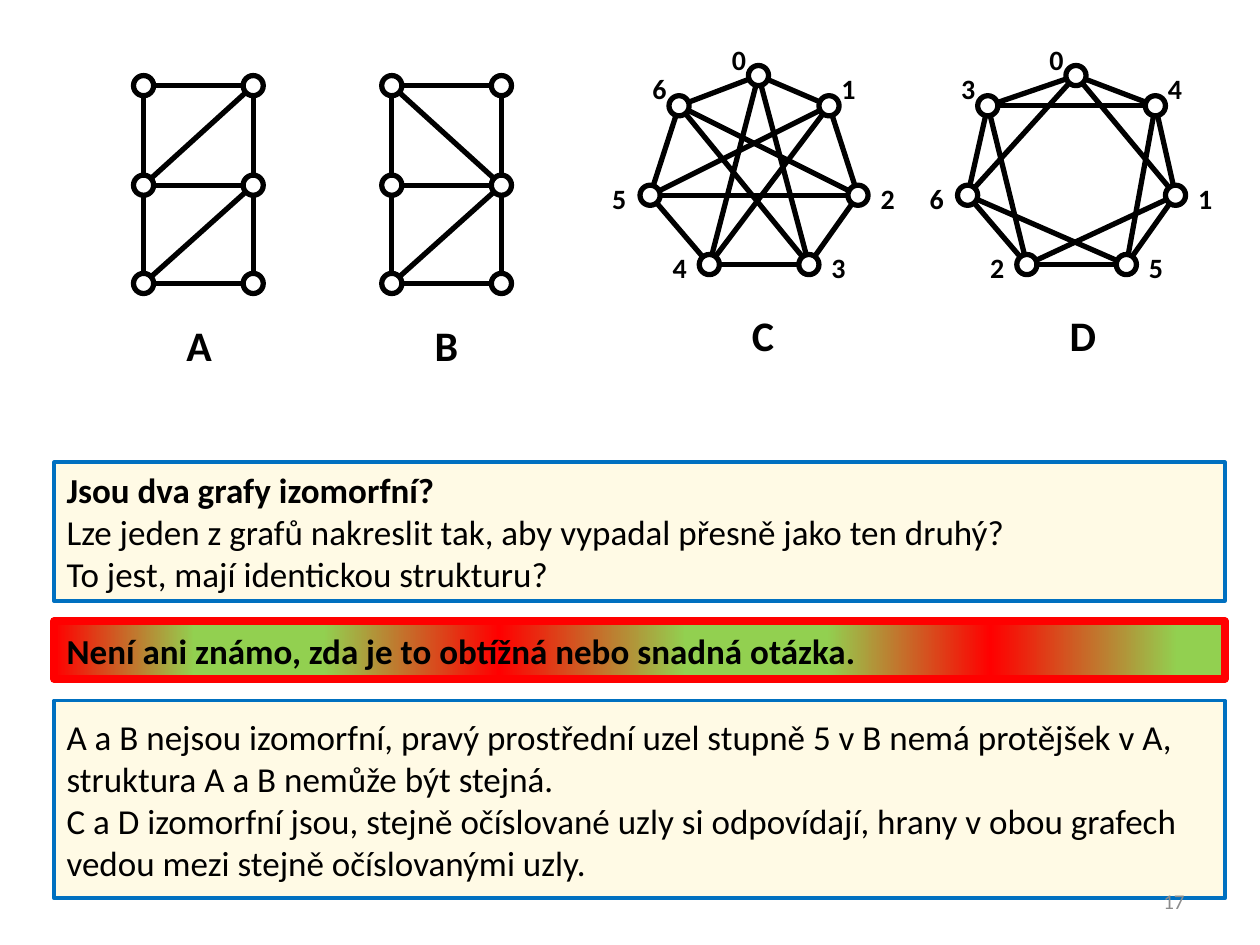
import pptx
import pptx.util
import pptx.dml.color
import pptx.enum.shapes
import pptx.enum.text
import pptx.oxml
import pptx.oxml.ns
from pptx.util import Inches

BLACK, WHITE, RED, GREEN = "000000", "FFFFFF", "FF0000", "92D050"
CREAM, BLUE, GREY = "FFFAE5", "0070C0", "8C8C8C"
FONT = "Calibri"
NODE_SIZE = 0.16

# Ladder graphs: nodes are (column, row), rungs and rails are shared
LADDER_COLUMNS = (0, 0.87)
LADDER_ROWS = (0.68, 1.47, 2.25)
LADDER_EDGES = [((0, row), (1, row)) for row in range(3)] + [
    ((column, 0), (column, 2)) for column in range(2)]
LADDERS = [
    # name, left, diagonals
    ("A", 1.14, [((0, 1), (1, 0)), ((0, 2), (1, 1))]),
    ("B", 3.11, [((0, 0), (1, 1)), ((0, 2), (1, 1))]),
]

# Seven-node graphs: both join i to i + 1 and to i + 3, only the order differs
RING_EDGES = [(i, (i + step) % 7) for step in (1, 3) for i in range(7)]
RINGS = [
    # name, name left, labels clockwise from the top, node centres
    ("C", 5.87, [0, 1, 2, 3, 4, 5, 6],
     [(6.02, 0.6), (6.58, 0.84), (6.81, 1.55), (6.42, 2.1),
      (5.63, 2.1), (5.16, 1.55), (5.39, 0.84)]),
    ("D", 8.39, [0, 4, 1, 5, 2, 6, 3],
     [(8.54, 0.6), (9.17, 0.84), (9.33, 1.55), (8.94, 2.1),
      (8.15, 2.1), (7.68, 1.55), (7.84, 0.84)]),
]
LABEL_OFFSETS = [(-0.31, -0.31), (0, -0.32), (0.08, -0.16), (0.08, -0.16),
                 (-0.39, -0.16), (-0.4, -0.16), (-0.31, -0.32)]

# Text panels: top, height, fill, line colour, line width, (text, bold)
GRADIENT = [(0, RED), (12, GREEN), (23, GREEN), (38, RED),
            (54, GREEN), (66, GREEN), (80, RED), (96, GREEN)]
PANELS = [
    (3.67, 1.1, CREAM, BLUE, 2.25, [
        ("Jsou dva grafy izomorfní?", True),
        ("Lze jeden z grafů nakreslit tak, aby vypadal přesně jako ten druhý?", False),
        ("To jest, mají identickou strukturu?", False)]),
    (4.93, 0.46, GRADIENT, RED, 4.5, [
        ("Není ani známo, zda je to obtížná nebo snadná otázka.", True)]),
    (5.56, 1.57, CREAM, BLUE, 2.25, [
        ("A a B nejsou izomorfní, pravý prostřední uzel stupně 5 v B nemá "
         "protějšek v A, struktura A a B nemůže být stejná.", False),
        ("C a D izomorfní jsou, stejně očíslované uzly si odpovídají, hrany v "
         "obou grafech vedou mezi stejně očíslovanými uzly.", False)]),
]

presentation = pptx.Presentation()
presentation.slide_width, presentation.slide_height = Inches(10), Inches(7.5)
slide = presentation.slides.add_slide(presentation.slide_layouts[6])


def rgb(value):
    return pptx.dml.color.RGBColor.from_string(value)


def set_line(line, color, width):
    line.color.rgb = rgb(color)
    line.width = pptx.util.Pt(width)


def set_gradient(shape, stops):
    shape.fill.gradient()
    shape.fill.gradient_angle = 0
    stop_list = shape.element.spPr.find(".//" + pptx.oxml.ns.qn("a:gsLst"))
    for stop in list(stop_list):
        stop_list.remove(stop)
    for percent, color in stops:
        stop_list.append(pptx.oxml.parse_xml(
            f'<a:gs {pptx.oxml.ns.nsdecls("a")} pos="{percent * 1000}">'
            f'<a:srgbClr val="{color}"/></a:gs>'))


def write(frame, lines, size, color=BLACK, align=pptx.enum.text.PP_ALIGN.LEFT):
    for index, (text, bold) in enumerate(lines):
        paragraph = frame.add_paragraph() if index else frame.paragraphs[0]
        paragraph.alignment = align
        run = paragraph.add_run()
        run.text = text
        run.font.name, run.font.size = FONT, pptx.util.Pt(size)
        run.font.bold = bold
        run.font.color.rgb = rgb(color)


def add_label(text, left, top, width, height, size, wrap):
    frame = slide.shapes.add_textbox(
        Inches(left), Inches(top), Inches(width), Inches(height)).text_frame
    frame.word_wrap = wrap
    frame.auto_size = pptx.enum.text.MSO_AUTO_SIZE.SHAPE_TO_FIT_TEXT
    write(frame, [(text, True)], size)


def add_shape(kind, left, top, width, height):
    shape = slide.shapes.add_shape(
        kind, Inches(left), Inches(top), Inches(width), Inches(height))
    shape.shadow.inherit = False
    return shape


def add_graph(nodes, edges):
    """Draw the edges first, then the nodes over their ends."""
    for start, end in edges:
        edge = slide.shapes.add_connector(
            pptx.enum.shapes.MSO_CONNECTOR.STRAIGHT,
            *(Inches(value) for value in nodes[start] + nodes[end]))
        set_line(edge.line, BLACK, 3)
        edge.element.spPr.append(pptx.oxml.parse_xml(
            f'<a:effectLst {pptx.oxml.ns.nsdecls("a")}/>'))
    for x, y in nodes.values():
        node = add_shape(pptx.enum.shapes.MSO_SHAPE.OVAL, x - NODE_SIZE / 2,
                         y - NODE_SIZE / 2, NODE_SIZE, NODE_SIZE)
        node.fill.solid()
        node.fill.fore_color.rgb = rgb(WHITE)
        set_line(node.line, BLACK, 3)


# Text panels
for top, height, fill, line_color, line_width, lines in PANELS:
    panel = add_shape(pptx.enum.shapes.MSO_SHAPE.RECTANGLE, 0.43, top, 9.29, height)
    if fill is GRADIENT:
        set_gradient(panel, fill)
    else:
        panel.fill.solid()
        panel.fill.fore_color.rgb = rgb(fill)
    set_line(panel.line, line_color, line_width)
    panel.text_frame.word_wrap = True
    panel.text_frame.vertical_anchor = pptx.enum.text.MSO_ANCHOR.MIDDLE
    write(panel.text_frame, lines, 20)

# Graphs A and B
for name, left, diagonals in LADDERS:
    nodes = {(column, row): (left + x, y)
             for column, x in enumerate(LADDER_COLUMNS)
             for row, y in enumerate(LADDER_ROWS)}
    add_graph(nodes, LADDER_EDGES + diagonals)
    add_label(name, left + 0.24, 2.49, 0.41, 0.5, 24, False)

# Graphs C and D
for name, name_left, labels, centres in RINGS:
    add_graph(dict(zip(labels, centres)), RING_EDGES)
    add_label(name, name_left, 2.41, 0.4, 0.5, 24, False)
    for label, (x, y), (dx, dy) in zip(labels, centres, LABEL_OFFSETS):
        add_label(str(label), x + dx, y + dy, 0.31, 0.37, 16, True)

# Slide number
number = slide.shapes.add_textbox(
    Inches(7.17), Inches(6.95), Inches(2.33), Inches(0.4)).text_frame
number.word_wrap = True
number.vertical_anchor = pptx.enum.text.MSO_ANCHOR.MIDDLE
write(number, [("17", False)], 12, GREY, pptx.enum.text.PP_ALIGN.RIGHT)

presentation.save("out.pptx")
